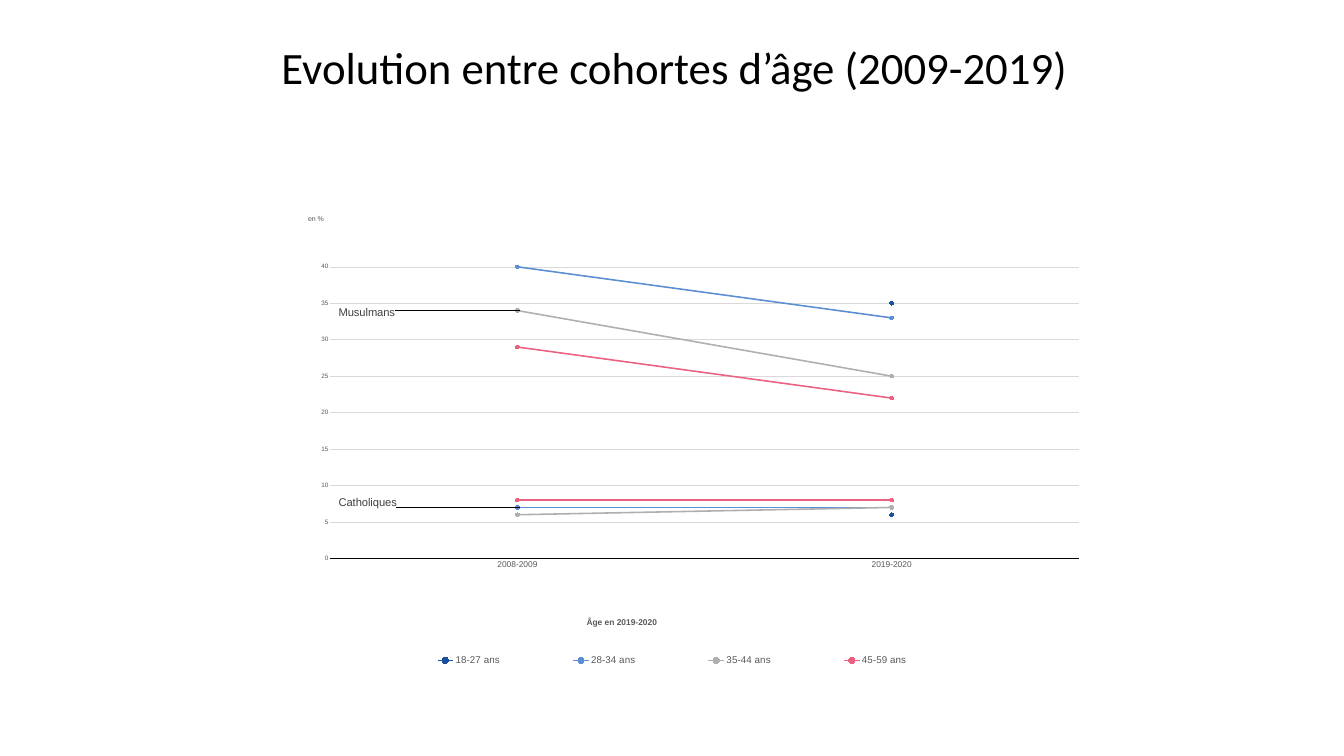
from lxml import etree
from pptx import Presentation
from pptx.chart.data import CategoryChartData
from pptx.dml.color import RGBColor
from pptx.enum.chart import (XL_CHART_TYPE, XL_LABEL_POSITION, XL_LEGEND_POSITION,
                             XL_MARKER_STYLE, XL_TICK_MARK)
from pptx.enum.text import MSO_ANCHOR, PP_ALIGN
from pptx.oxml.ns import qn
from pptx.util import Inches, Pt

LINE_MARKERS = XL_CHART_TYPE.LINE_MARKERS
CIRCLE = XL_MARKER_STYLE.CIRCLE
NO_TICK = XL_TICK_MARK.NONE
BOTTOM = XL_LEGEND_POSITION.BOTTOM
RIGHT = XL_LABEL_POSITION.RIGHT
MIDDLE = MSO_ANCHOR.MIDDLE
CENTER = PP_ALIGN.CENTER

BLACK = RGBColor(0x00, 0x00, 0x00)
GREY_TEXT = RGBColor(0x59, 0x59, 0x59)
LABEL_TEXT = RGBColor(0x40, 0x40, 0x40)
GRID = RGBColor(0xD9, 0xD9, 0xD9)
NAVY = RGBColor(0x19, 0x51, 0xA0)
BLUE = RGBColor(0x5B, 0x8E, 0xD4)
SILVER = RGBColor(0xB0, 0xAE, 0xAE)
PINK = RGBColor(0xEB, 0x61, 0x7F)

COHORT_COLORS = [NAVY, BLUE, SILVER, PINK]
PERIODS = ["2008-2009", "2019-2020"]
MUSLIMS = [("18-27 ans", (None, 35)), ("28-34 ans", (40, 33)),
           ("35-44 ans", (34, 25)), ("45-59 ans", (29, 22))]
CATHOLICS = [("Series 5", (None, 6)), ("Series 6", (7, 7)),
             ("Series 7", (6, 7)), ("Series 8", (8, 8))]
# series index: (group name, shift of its label as shares of the chart)
GROUP_LABELS = {2: ("Musulmans", (-0.21, 0.004)), 5: ("Catholiques", (-0.21, -0.01))}


def style_font(font, size, color, name="Arial", bold=False):
    font.size, font.name, font.bold = Pt(size), name, bold
    font.color.rgb = color


def add_run(frame, text, *style, **options):
    run = frame.paragraphs[0].add_run()
    run.text = text
    style_font(run.font, *style, **options)


def set_layout(parent, after, shares, edge=True, inner=False):
    """Place a chart part by hand; shares are x, y and optionally w, h."""
    for old in parent.findall(qn("c:layout")):
        parent.remove(old)
    layout = etree.Element(qn("c:layout"))
    manual = etree.SubElement(layout, qn("c:manualLayout"))
    settings = [("layoutTarget", "inner")] if inner else []
    if edge:
        settings += [("xMode", "edge"), ("yMode", "edge")]
    settings += zip("xywh", shares)
    for tag, value in settings:
        etree.SubElement(manual, qn("c:" + tag)).set("val", str(value))
    if after is None:
        parent.insert(0, layout)
    else:
        after.addnext(layout)


def add_title(slide, left, top, width, height):
    frame = slide.shapes.add_textbox(left, top, width, height).text_frame
    frame.word_wrap = True
    frame.vertical_anchor = MIDDLE
    frame.paragraphs[0].alignment = CENTER
    frame.paragraphs[0].line_spacing = 0.9
    add_run(frame, "Evolution entre cohortes d’âge (2009-2019)", 64, BLACK, "Calibri")


def style_axes(chart):
    periods, percent = chart.category_axis, chart.value_axis
    for axis, size in ((periods, 12), (percent, 9)):
        axis.major_tick_mark = axis.minor_tick_mark = NO_TICK
        style_font(axis.tick_labels.font, size, GREY_TEXT)
    periods.format.line.color.rgb = BLACK
    periods.format.line.width = Pt(0.75)
    percent.format.line.fill.background()
    percent.minimum_scale, percent.maximum_scale, percent.major_unit = 0, 40, 5
    percent.major_gridlines.format.line.color.rgb = GRID
    percent.major_gridlines.format.line.width = Pt(0.75)

    frame = percent.axis_title.text_frame
    add_run(frame, "en %", 10, GREY_TEXT)
    body = percent.axis_title._element.find(".//" + qn("a:bodyPr"))
    body.set("rot", "0")
    body.set("vert", "horz")
    title = percent.axis_title._element
    set_layout(title, title.find(qn("c:tx")), (0.08, 0.025))


def style_series(chart):
    for index, series in enumerate(chart.plots[0].series):
        color = COHORT_COLORS[index % len(COHORT_COLORS)]
        series.smooth = False
        series.format.line.color.rgb = color
        series.format.line.width = Pt(2.25)
        series.marker.style, series.marker.size = CIRCLE, 5
        series.marker.format.fill.solid()
        series.marker.format.fill.fore_color.rgb = color
        series.marker.format.line.color.rgb = color
        if index in GROUP_LABELS:
            label_group(series, *GROUP_LABELS[index])


def label_group(series, name, shift):
    """Name the group beside the first point of the series."""
    label = series.points[0].data_label
    add_run(label.text_frame, name, 16, LABEL_TEXT)
    label.position = RIGHT
    series.data_labels.show_value = False
    labels = series.data_labels._element
    for leader in labels.findall(qn("c:showLeaderLines")):
        labels.remove(leader)
    point = labels.find(qn("c:dLbl"))
    set_layout(point, point.find(qn("c:idx")), shift, edge=False)


def add_legend(chart):
    chart.has_legend = True
    chart.legend.position = BOTTOM
    chart.legend.include_in_layout = False
    style_font(chart.legend.font, 14, GREY_TEXT)
    legend = chart.legend._element
    previous = legend.find(qn("c:legendPos"))
    for index in range(len(MUSLIMS), len(MUSLIMS + CATHOLICS)):
        entry = etree.Element(qn("c:legendEntry"))
        etree.SubElement(entry, qn("c:idx")).set("val", str(index))
        etree.SubElement(entry, qn("c:delete")).set("val", "1")
        previous.addnext(entry)
        previous = entry
    set_layout(legend, previous, (0.15, 0.93, 0.7, 0.055))


def add_cohort_chart(slide, left, top, width, height):
    data = CategoryChartData()
    data.categories = PERIODS
    for name, values in MUSLIMS + CATHOLICS:
        data.add_series(name, values)
    chart = slide.shapes.add_chart(LINE_MARKERS, left, top, width, height, data).chart
    style_font(chart.font, 10, BLACK)
    chart.plots[0].vary_by_categories = False

    chart.has_title = True
    add_run(chart.chart_title.text_frame, "Âge en 2019-2020", 12, GREY_TEXT, bold=True)
    title = chart.chart_title._element
    set_layout(title, title.find(qn("c:tx")), (0.4, 0.865))
    plot_area = chart._chartSpace.find(".//" + qn("c:plotArea"))
    set_layout(plot_area, None, (0.107, 0.137, 0.861, 0.608), inner=True)

    style_axes(chart)
    style_series(chart)
    add_legend(chart)


def main():
    deck = Presentation()
    deck.slide_width, deck.slide_height = Inches(26.67), Inches(15)
    slide = deck.slides.add_slide(deck.slide_layouts[6])
    add_title(slide, Inches(5.13), Inches(0.63), Inches(16.5), Inches(1.52))
    add_cohort_chart(slide, Inches(4.71), Inches(3.99), Inches(17.25), Inches(9.52))
    deck.save("out.pptx")


if __name__ == "__main__":
    main()
